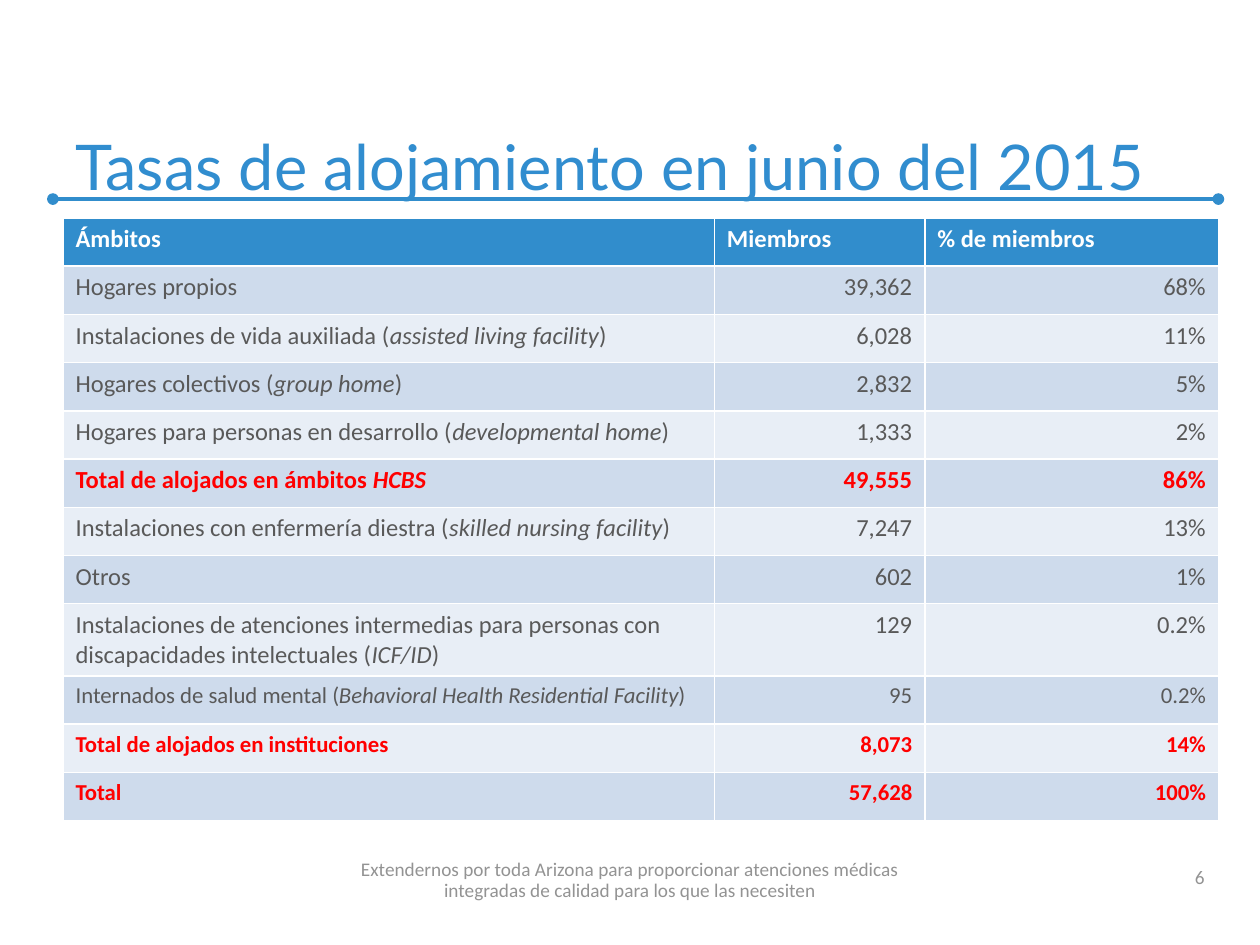
from lxml import etree
from pptx import Presentation
from pptx.dml.color import RGBColor
from pptx.enum.shapes import MSO_CONNECTOR
from pptx.enum.text import MSO_ANCHOR, PP_ALIGN
from pptx.oxml.ns import qn
from pptx.util import Inches, Pt


def rgb(value):
    return RGBColor.from_string(value)


def add_run(p, text, size, color, bold=False, italic=False, font="Calibri"):
    r = p.add_run()
    r.text = text
    r.font.name = font
    r.font.size = Pt(size)
    r.font.bold = bold
    r.font.italic = italic
    r.font.color.rgb = rgb(color)


BLUE, GRAY, RED, WHITE, MUTED = "318DCC", "595959", "FF0000", "FFFFFF", "939393"
BANDS = ["E8EEF6", "CEDBEC"]

prs = Presentation()
prs.slide_width, prs.slide_height = Inches(10), Inches(7.5)
s = prs.slides.add_slide(prs.slide_layouts[5])

title = s.shapes.title
title.left, title.top = Inches(0.5), Inches(0.33)
title.width, title.height = Inches(9.08), Inches(1.33)
tf = title.text_frame
tf.word_wrap = True
tf.vertical_anchor = MSO_ANCHOR.BOTTOM
p = tf.paragraphs[0]
p.alignment = PP_ALIGN.LEFT
add_run(p, "Tasas de alojamiento en junio del 2015", 36, "318DCF", font="Lato")

rule = s.shapes.add_connector(
    MSO_CONNECTOR.STRAIGHT, Inches(0.42), Inches(1.58), Inches(9.67), Inches(1.58))
rule.line.color.rgb = rgb(BLUE)
rule.line.width = Pt(2.25)
ln = rule.line._get_or_add_ln()
for end in ("a:headEnd", "a:tailEnd"):
    etree.SubElement(ln, qn(end), type="oval")
etree.SubElement(rule._element.spPr, qn("a:effectLst"))

rows = [
    (["Ámbitos"], "Miembros", "% de miembros"),
    (["Hogares propios"], "39,362", "68%"),
    (["Instalaciones de vida auxiliada (", "assisted living facility", ")"], "6,028", "11%"),
    (["Hogares colectivos (", "group home", ")"], "2,832", "5%"),
    (["Hogares para personas en desarrollo (", "developmental home", ")"], "1,333", "2%"),
    (["Total de alojados en ámbitos ", "HCBS"], "49,555", "86%"),
    (["Instalaciones con enfermería diestra (", "skilled nursing facility", ")"], "7,247", "13%"),
    (["Otros"], "602", "1%"),
    (["Instalaciones de atenciones intermedias para personas con "
      "discapacidades intelectuales (", "ICF/ID", ")"], "129", "0.2%"),
    (["Internados de salud mental (", "Behavioral Health Residential Facility", ")"], "95", "0.2%"),
    (["Total de alojados en instituciones"], "8,073", "14%"),
    (["Total"], "57,628", "100%"),
]
TALL_ROW, TALL_HEIGHT = 8, Inches(0.57)
TABLE_HEIGHT = Inches(4.78)
row_height = (TABLE_HEIGHT - TALL_HEIGHT) // (len(rows) - 1)

table = s.shapes.add_table(
    len(rows), 3, Inches(0.5), Inches(1.73), Inches(9.17), TABLE_HEIGHT).table
for col, width in zip(table.columns, (5.17, 1.67, 2.33)):
    col.width = Inches(width)

for i, (setting, members, share) in enumerate(rows):
    table.rows[i].height = TALL_HEIGHT if i == TALL_ROW else row_height
    header = i == 0
    total = setting[0].startswith("Total")
    color = WHITE if header else RED if total else GRAY
    size = 14 if i <= TALL_ROW else 13
    for j, parts in enumerate((setting, [members], [share])):
        cell = table.cell(i, j)
        cell.fill.solid()
        cell.fill.fore_color.rgb = rgb(BLUE if header else BANDS[i % 2])
        p = cell.text_frame.paragraphs[0]
        p.alignment = PP_ALIGN.RIGHT if j and not header else PP_ALIGN.LEFT
        for k, part in enumerate(parts):
            add_run(p, part, size, color, bold=header or total, italic=k == 1)

footers = [
    (7.33, 2.33, 0.32, PP_ALIGN.RIGHT, None, ["6"]),
    (0, 10, 0.42, PP_ALIGN.CENTER, Pt(12),
     ["Extendernos por toda Arizona para proporcionar atenciones médicas",
      "integradas de calidad para los que las necesiten"]),
]
for left, width, height, align, spacing, lines in footers:
    sp = s.shapes.add_textbox(Inches(left), Inches(6.78), Inches(width), Inches(height))
    tf = sp.text_frame
    tf.word_wrap = True
    tf.vertical_anchor = MSO_ANCHOR.BOTTOM
    p = tf.paragraphs[0]
    p.alignment = align
    p.line_spacing = spacing
    for n, line in enumerate(lines):
        if n:
            p.add_line_break()
        add_run(p, line, 11, MUTED)

prs.save("out.pptx")
